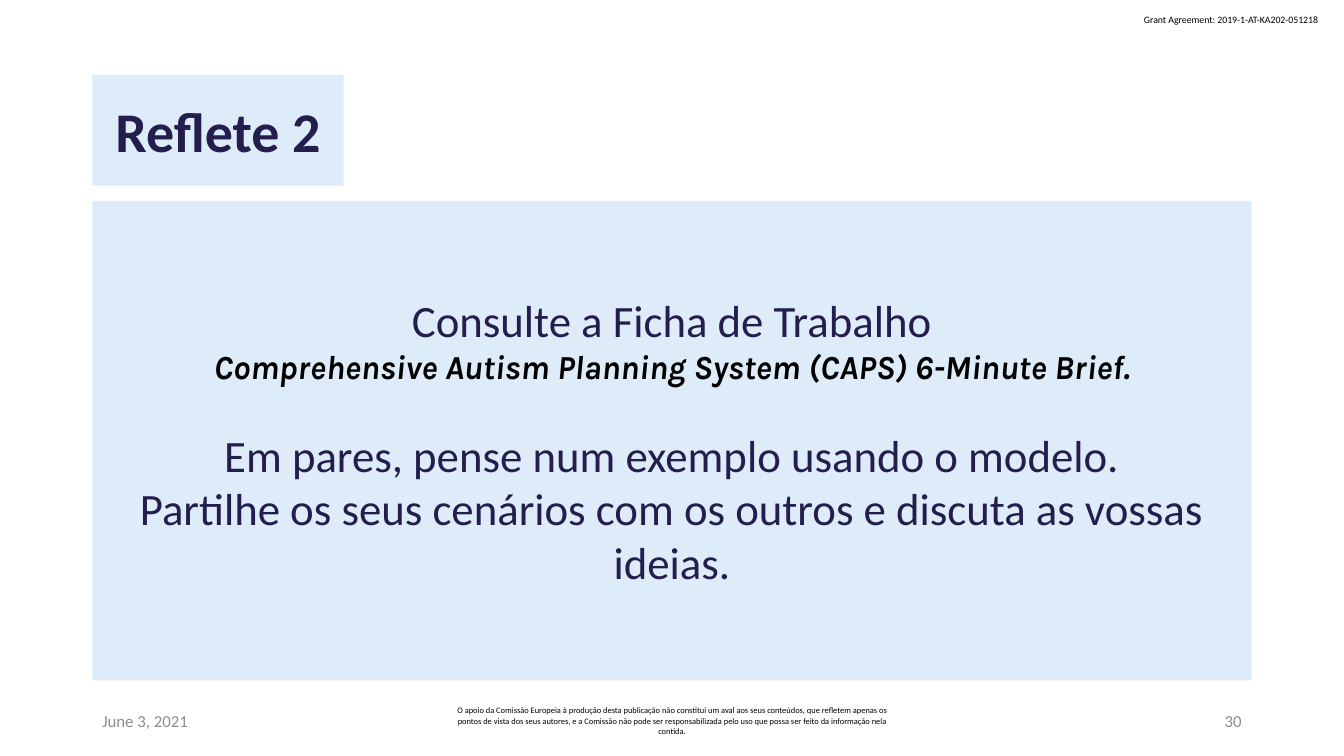
import dataclasses
import typing

import pptx
import pptx.dml.color
import pptx.enum.text
import pptx.oxml.ns
import pptx.util
from lxml import etree

COLS, ROWS = 160, 90
COLORS = {"panel": "DEEBF8", "navy": "241E4E", "black": "000000", "grey": "8C8C8C"}
ALIGN = pptx.enum.text.PP_ALIGN
ANCHOR = pptx.enum.text.MSO_ANCHOR

prs = pptx.Presentation()
prs.slide_width = pptx.util.Inches(13.33)
prs.slide_height = pptx.util.Inches(7.5)


@dataclasses.dataclass(frozen=True)
class Line:
    text: str
    size: float
    color: str
    font: str = "Calibri"
    bold: bool = False
    italic: bool = False
    before: float = 0


@dataclasses.dataclass(frozen=True)
class Block:
    col: float
    row: float
    cols: float
    rows: float
    lines: typing.Tuple[Line, ...]
    align: ALIGN = ALIGN.LEFT
    anchor: ANCHOR = ANCHOR.MIDDLE
    wrap: bool = True


def grid(block: Block) -> typing.Tuple[int, int, int, int]:
    cw, rh = prs.slide_width / COLS, prs.slide_height / ROWS
    return (round(block.col * cw), round(block.row * rh),
            round(block.cols * cw), round(block.rows * rh))


def apply(target: typing.Any, values: typing.Dict[str, typing.Any]) -> None:
    for name, value in values.items():
        setattr(target, name, value)


def rgb(name: str) -> pptx.dml.color.RGBColor:
    return pptx.dml.color.RGBColor.from_string(COLORS[name])


def write(sp: typing.Any, block: Block) -> None:
    tf = sp.text_frame
    apply(tf, {"word_wrap": block.wrap, "vertical_anchor": block.anchor,
               "auto_size": pptx.enum.text.MSO_AUTO_SIZE.NONE})
    for i, line in enumerate(block.lines):
        p = tf.add_paragraph() if i else tf.paragraphs[0]
        apply(p, {"alignment": block.align, "line_spacing": 1.0,
                  "space_before": pptx.util.Pt(line.before)})
        if sp.is_placeholder:
            pPr = p._p.get_or_add_pPr()
            pPr.set("marL", "0")
            pPr.set("indent", "0")
            etree.SubElement(pPr, pptx.oxml.ns.qn("a:buNone"))
        r = p.add_run()
        r.text = line.text
        apply(r.font, {"name": line.font, "size": pptx.util.Pt(line.size),
                       "bold": line.bold, "italic": line.italic})
        r.font.color.rgb = rgb(line.color)


def add_note(s: typing.Any, block: Block) -> None:
    write(s.shapes.add_textbox(*grid(block)), block)


def fill_panel(sp: typing.Any, block: Block) -> None:
    apply(sp, dict(zip(("left", "top", "width", "height"), grid(block))))
    sp.fill.solid()
    sp.fill.fore_color.rgb = rgb("panel")
    margin_x, margin_y = pptx.util.Inches(0.13), pptx.util.Inches(0.07)
    apply(sp.text_frame, {"margin_left": margin_x, "margin_right": margin_x,
                          "margin_top": margin_y, "margin_bottom": margin_y})
    write(sp, block)


NOTES = (
    Block(135, 1, 23.7, 2.6,
          (Line("Grant Agreement: 2019-1-AT-KA202-051218", 7, "black"),),
          anchor=ANCHOR.TOP, wrap=False),
    Block(11, 83.4, 36, 4.8, (Line("June 3, 2021", 12, "grey"),)),
    Block(53, 83.4, 54, 4.8, (Line(
        "O apoio da Comissão Europeia à produção desta publicação não constitui um aval "
        "aos seus conteúdos, que refletem apenas os pontos de vista dos seus autores, e a "
        "Comissão não pode ser responsabilizada pelo uso que possa ser feito da informação "
        "nela contida.", 6, "black"),), ALIGN.CENTER),
    Block(113, 83.4, 36, 4.8, (Line("30", 12, "grey"),), ALIGN.RIGHT),
)
TITLE = Block(11, 8.9, 29.9, 13.2, (Line("Reflete 2", 40, "navy", bold=True),), ALIGN.CENTER)
BODY = Block(11, 23.9, 138, 57.1, (
    Line("Consulte a Ficha de Trabalho", 32, "navy"),
    Line("Comprehensive Autism Planning System (CAPS) 6-Minute Brief.", 24, "black",
         "Karla", bold=True, italic=True),
    Line("Em pares, pense num exemplo usando o modelo.", 32, "navy", before=29),
    Line("Partilhe os seus cenários com os outros e discuta as vossas ideias.", 32, "navy"),
), ALIGN.CENTER)


def main() -> None:
    s = prs.slides.add_slide(prs.slide_layouts[1])
    for note in NOTES:
        add_note(s, note)
    fill_panel(s.shapes.title, TITLE)
    fill_panel(s.placeholders[1], BODY)
    prs.save("out.pptx")


if __name__ == "__main__":
    main()
